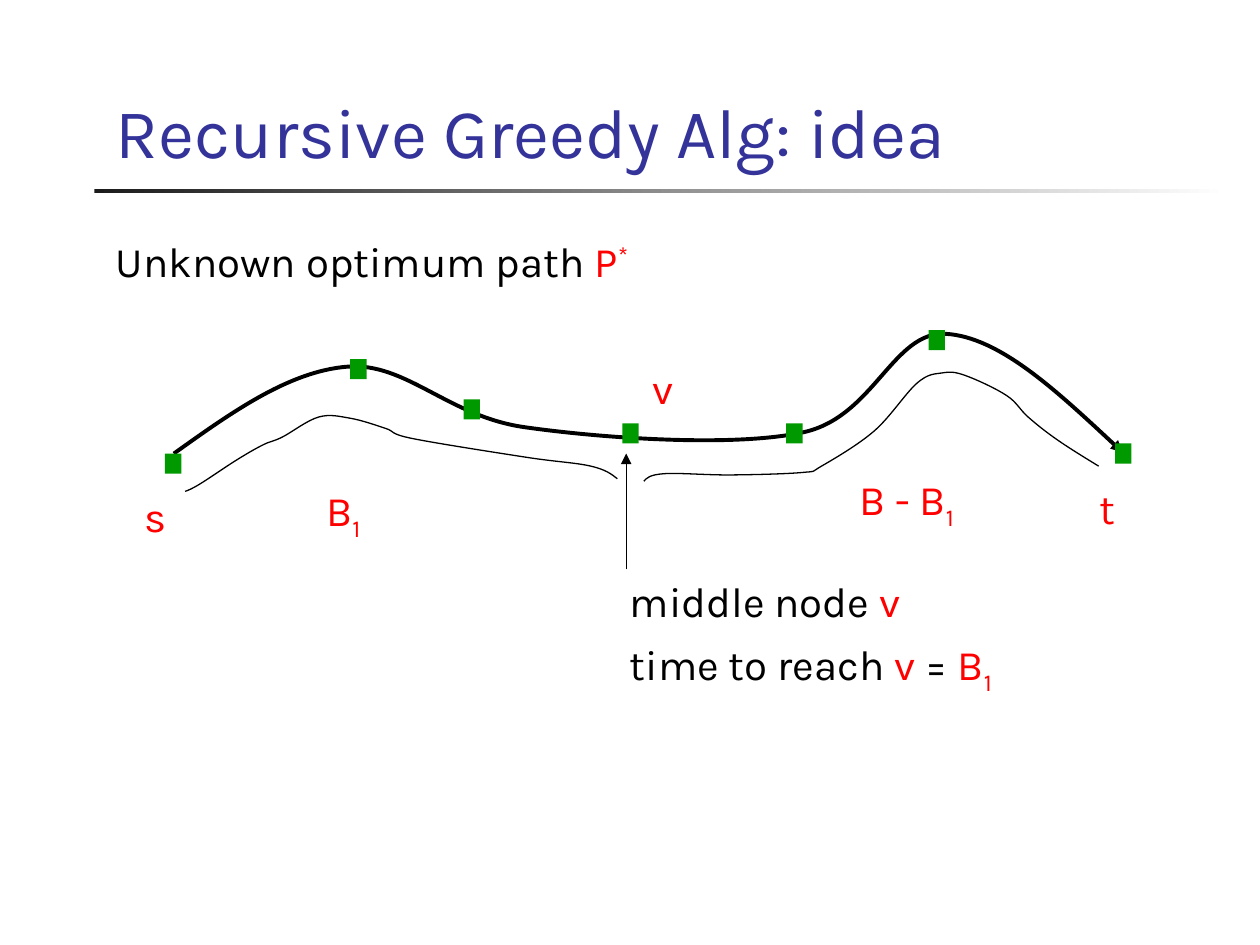
"""Build the slide that sketches the idea of the recursive greedy algorithm."""
from dataclasses import dataclass
from typing import NamedTuple

from lxml import etree
from pptx import Presentation
from pptx.dml.color import RGBColor
from pptx.enum.shapes import MSO_CONNECTOR, MSO_SHAPE
from pptx.enum.text import MSO_ANCHOR, MSO_AUTO_SIZE, PP_ALIGN
from pptx.oxml.ns import qn
from pptx.util import Inches, Pt

STRAIGHT = MSO_CONNECTOR.STRAIGHT
RECTANGLE = MSO_SHAPE.RECTANGLE
BOTTOM = MSO_ANCHOR.BOTTOM
NO_AUTOFIT, GROW = MSO_AUTO_SIZE.NONE, MSO_AUTO_SIZE.SHAPE_TO_FIT_TEXT
LEFT = PP_ALIGN.LEFT

BLACK = RGBColor(0x00, 0x00, 0x00)
WHITE = RGBColor(0xFF, 0xFF, 0xFF)
CHARCOAL = RGBColor(0x1C, 0x1C, 0x1C)
INDIGO = RGBColor(0x33, 0x33, 0x99)
RED = RGBColor(0xFF, 0x00, 0x00)
GREEN = RGBColor(0x00, 0x99, 0x00)

FONT = "Karla"
TITLE_SIZE, LABEL_SIZE = 40, 24
THIN, THICK = 0.75, 2.25
SUPERSCRIPT, SUBSCRIPT = "30000", "-25000"

MARGIN = 0.82
NOTE_LEFT, NOTE_TOP = 4.9, 4.52
POINTER_X, POINTER_TIP = 4.97, 3.6
LABEL_HEIGHT = 0.5
LETTER_WIDTH = 0.64
NODE_WIDTH, NODE_HEIGHT = 0.13, 0.16


class Point(NamedTuple):
    x: float
    y: float


@dataclass(frozen=True)
class Span:
    text: str
    color: RGBColor = RED
    baseline: str = ""


@dataclass(frozen=True)
class Label:
    left: float
    top: float
    width: float
    spans: tuple[Span, ...]
    wrap: bool = True


@dataclass(frozen=True)
class Curve:
    knots: tuple[Point, ...]
    weight: float = THIN
    arrow: bool = False


INDEX_ONE = Span("1", baseline=SUBSCRIPT)

LABELS = (
    Label(MARGIN, 1.82, 4.48, (Span("Unknown optimum path ", BLACK), Span("P"),
                               Span("*", baseline=SUPERSCRIPT))),
    Label(1.05, 3.84, LETTER_WIDTH, (Span("s"),)),
    Label(5.08, 2.83, LETTER_WIDTH, (Span("v"),)),
    Label(8.63, 3.78, LETTER_WIDTH, (Span("t"),)),
    Label(2.49, 3.8, 0.91, (Span("B"), INDEX_ONE)),
    Label(6.72, 3.71, 1.07, (Span("B - B"), INDEX_ONE)),
    Label(NOTE_LEFT, NOTE_TOP, 3.91, (Span("middle node ", BLACK), Span("v"))),
    Label(NOTE_LEFT, NOTE_TOP + LABEL_HEIGHT, 3.22,
          (Span("time to reach ", BLACK), Span("v "), Span("=", BLACK), Span(" B"), INDEX_ONE),
          wrap=False),
)

NODES = {
    "start s": Point(1.31, 3.6),
    "first crest": Point(2.78, 2.85),
    "descent": Point(3.68, 3.17),
    "middle v": Point(4.94, 3.36),
    "ascent": Point(6.24, 3.36),
    "second crest": Point(7.37, 2.62),
    "target t": Point(8.85, 3.52),
}

OPTIMUM_PATH = Curve((
    Point(1.38, 3.6), Point(2.76, 2.91), Point(4.16, 3.39),
    Point(6.38, 3.43), Point(7.51, 2.65), Point(8.91, 3.59),
), THICK, arrow=True)

TIME_TO_MIDDLE = Curve((
    Point(1.47, 3.9), Point(1.59, 3.84), Point(1.88, 3.65), Point(2.09, 3.53),
    Point(2.24, 3.47), Point(2.53, 3.31), Point(2.78, 3.32), Point(3.06, 3.4),
    Point(3.27, 3.48), Point(4.18, 3.63), Point(4.69, 3.7), Point(4.9, 3.8),
))

TIME_FROM_MIDDLE = Curve((
    Point(5.11, 3.82), Point(5.27, 3.76), Point(5.8, 3.77), Point(6.37, 3.75),
    Point(6.52, 3.7), Point(6.94, 3.42), Point(7.28, 3.04), Point(7.48, 2.96),
    Point(7.66, 2.98), Point(7.99, 3.14), Point(8.16, 3.31), Point(8.39, 3.49),
    Point(8.72, 3.7),
))


def midpoint(first: Point, second: Point) -> Point:
    return Point((first.x + second.x) / 2, (first.y + second.y) / 2)


def smooth(knots: tuple[Point, ...]) -> list[Point]:
    """Return two handles and an end knot per span, each handle parallel to its neighbours' chord."""
    arriving, leaving = [], []
    for before, knot, after in zip(knots, knots[1:], knots[2:]):
        reach_x, reach_y = (after.x - before.x) / 6, (after.y - before.y) / 6
        arriving.append(Point(knot.x - reach_x, knot.y - reach_y))
        leaving.append(Point(knot.x + reach_x, knot.y + reach_y))
    leaving.insert(0, midpoint(knots[0], arriving[0]))
    arriving.append(midpoint(leaving[-1], knots[-1]))
    return [point for span in zip(leaving, arriving, knots[1:]) for point in span]


def add_span(paragraph, span: Span, size: float) -> None:
    run = paragraph.add_run()
    run.text = span.text
    run.font.name = FONT
    run.font.size = Pt(size)
    run.font.color.rgb = span.color
    if span.baseline:
        run.font._element.set("baseline", span.baseline)


def style_line(line, weight: float, arrow: bool) -> None:
    line.color.rgb = BLACK
    line.width = Pt(weight)
    if arrow:
        etree.SubElement(line._get_or_add_ln(), qn("a:tailEnd"), type="triangle")


def add_title(page) -> None:
    title = page.shapes.title
    title.left, title.top = Inches(MARGIN), Inches(0.17)
    title.width, title.height = Inches(8.94), Inches(1.25)
    frame = title.text_frame
    frame.vertical_anchor = BOTTOM
    frame.auto_size = NO_AUTOFIT
    frame.paragraphs[0].alignment = LEFT
    add_span(frame.paragraphs[0], Span("Recursive Greedy Alg: idea", INDIGO), TITLE_SIZE)


def add_rectangle(page, left: float, top: float, width: float, height: float):
    box = page.shapes.add_shape(RECTANGLE, Inches(left), Inches(top),
                                Inches(width), Inches(height))
    box.shadow.inherit = False
    box.line.fill.background()
    return box


def add_rule(page) -> None:
    fill = add_rectangle(page, 0.75, 1.5, 9, 0.03).fill
    fill.gradient()
    fill.gradient_angle = 0
    for stop, color in zip(fill.gradient_stops, (CHARCOAL, WHITE)):
        stop.color.rgb = color


def add_node(page, corner: Point) -> None:
    node = add_rectangle(page, corner.x, corner.y, NODE_WIDTH, NODE_HEIGHT)
    node.fill.solid()
    node.fill.fore_color.rgb = GREEN


def add_curve(page, curve: Curve) -> None:
    start = curve.knots[0]
    builder = page.shapes.build_freeform(Inches(start.x), Inches(start.y))
    builder.add_line_segments([(Inches(point.x), Inches(point.y))
                               for point in smooth(curve.knots)], close=False)
    shape = builder.convert_to_shape()
    shape.shadow.inherit = False
    shape.fill.background()
    style_line(shape.line, curve.weight, curve.arrow)
    outline = shape._element.find(".//" + qn("a:path"))
    segments = outline.findall(qn("a:lnTo"))
    for first in range(0, len(segments), 3):
        bezier = etree.SubElement(outline, qn("a:cubicBezTo"))
        for segment in segments[first:first + 3]:
            bezier.append(segment[0])
            outline.remove(segment)


def add_pointer(page) -> None:
    pointer = page.shapes.add_connector(STRAIGHT, Inches(POINTER_X), Inches(NOTE_TOP),
                                        Inches(POINTER_X), Inches(POINTER_TIP))
    style_line(pointer.line, THIN, arrow=True)
    etree.SubElement(pointer._element.spPr, qn("a:effectLst"))


def add_label(page, label: Label) -> None:
    box = page.shapes.add_textbox(Inches(label.left), Inches(label.top),
                                  Inches(label.width), Inches(LABEL_HEIGHT))
    frame = box.text_frame
    frame.word_wrap = label.wrap
    frame.auto_size = GROW
    for span in label.spans:
        add_span(frame.paragraphs[0], span, LABEL_SIZE)


deck = Presentation()
deck.slide_width, deck.slide_height = Inches(10), Inches(7.5)
page = deck.slides.add_slide(deck.slide_layouts[5])
add_rule(page)
add_title(page)
for curve in (OPTIMUM_PATH, TIME_TO_MIDDLE, TIME_FROM_MIDDLE):
    add_curve(page, curve)
for corner in NODES.values():
    add_node(page, corner)
add_pointer(page)
for label in LABELS:
    add_label(page, label)
deck.save("out.pptx")
